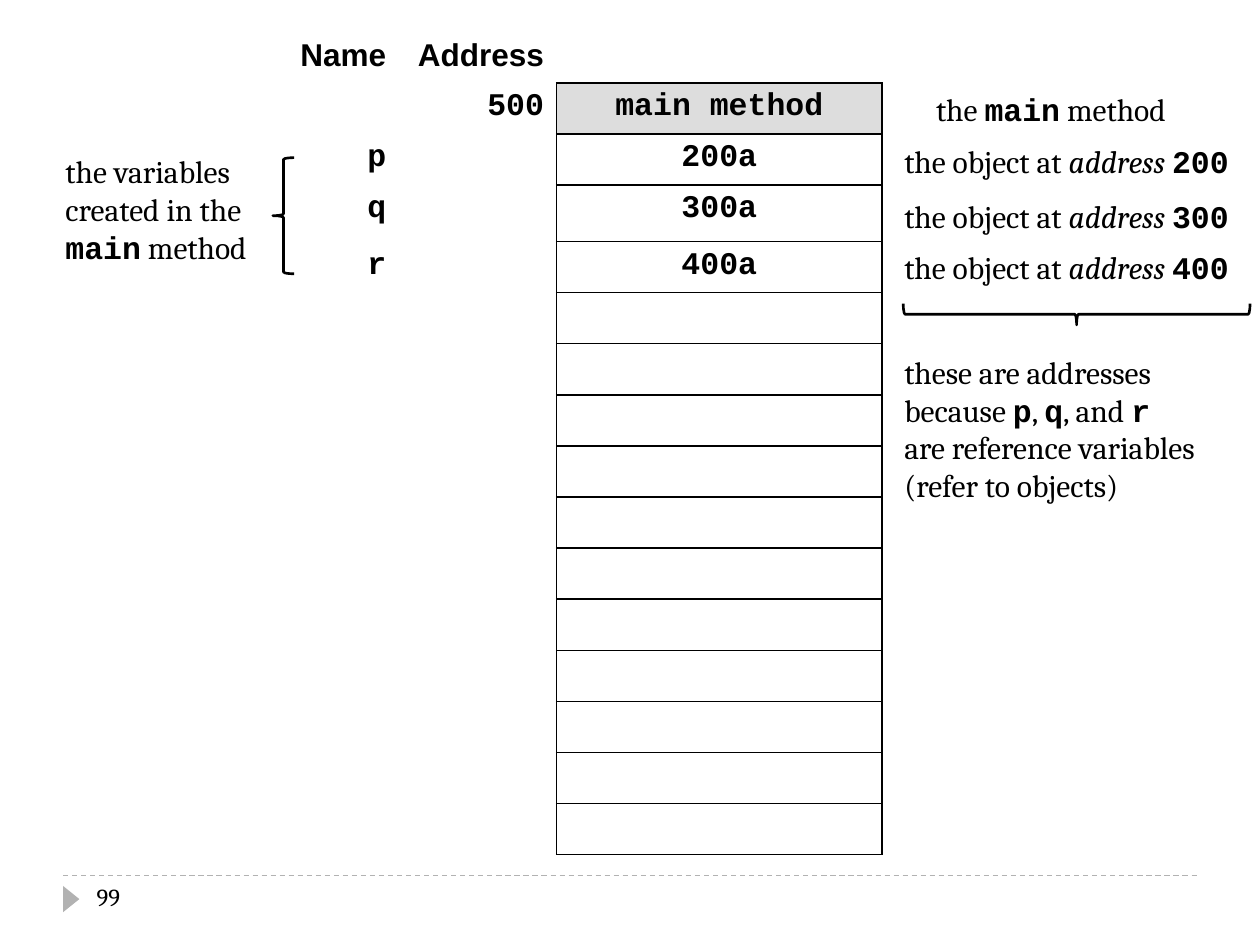
import pptx
import pptx.dml.color
import pptx.enum.dml
import pptx.enum.shapes
import pptx.enum.text
import pptx.oxml.ns
import pptx.util
from lxml import etree

Cm, Pt = pptx.util.Cm, pptx.util.Pt
SHAPES = pptx.enum.shapes.MSO_SHAPE
ALIGN = pptx.enum.text.PP_ALIGN
BLACK, WHITE, SILVER, HEADING = "000000", "FFFFFF", "B2B2B2", "DDDDDD"
SERIF, SANS, MONO = "Cambria", "Arial", "Courier New"


def colour(code):
    return pptx.dml.color.RGBColor.from_string(code)


def code(text):
    return text, MONO, True, False


def plain(text):
    return text, SERIF, False, False


def italic(text):
    return text, SERIF, False, True


def draw_border(cell, side, shade, width):
    """Add one cell edge; side is L, R, T or B, in that order."""
    tag = pptx.oxml.ns.qn
    properties = cell._tc.get_or_add_tcPr()
    edge = etree.SubElement(properties, tag("a:ln" + side), w=str(Pt(width)))
    fill = etree.SubElement(edge, tag("a:solidFill"))
    etree.SubElement(fill, tag("a:srgbClr"), val=shade)


class MemorySlide:
    def __init__(self, page, size=18):
        self.page = page
        self.size = size

    def style_font(self, font, name, bold=False, italic=False, size=None):
        font.name, font.bold, font.italic = name, bold, italic
        font.size = Pt(size or self.size)
        font.color.rgb = colour(BLACK)

    def text(self, left, top, width, height, lines, size=None):
        """Add a text box; each line is a list of (text, font, bold, italic)."""
        box = self.page.shapes.add_textbox(Cm(left), Cm(top), Cm(width), Cm(height))
        frame = box.text_frame
        frame.word_wrap = False
        frame.auto_size = pptx.enum.text.MSO_AUTO_SIZE.SHAPE_TO_FIT_TEXT
        for number, line in enumerate(lines):
            para = frame.add_paragraph() if number else frame.paragraphs[0]
            for words, *look in line:
                span = para.add_run()
                span.text = words
                self.style_font(span.font, *look, size=size)

    def shape(self, kind, left, top, width, height, rotation=0, fill=None):
        """Add a filled shape, or a black outline when there is no fill."""
        shape = self.page.shapes.add_shape(kind, Cm(left), Cm(top), Cm(width), Cm(height))
        shape.shadow.inherit = False
        shape.rotation = rotation
        if fill:
            shape.fill.solid()
            shape.fill.fore_color.rgb = colour(fill)
            shape.line.fill.background()
        else:
            shape.fill.background()
            shape.line.color.rgb = colour(BLACK)
            shape.line.width = Pt(1.5)

    def dashed_line(self, left, right, top):
        line = self.page.shapes.add_connector(
            pptx.enum.shapes.MSO_CONNECTOR.STRAIGHT, Cm(left), Cm(top), Cm(right), Cm(top))
        line.line.color.rgb = colour(SILVER)
        line.line.width = Pt(0.75)
        line.line.dash_style = pptx.enum.dml.MSO_LINE.DASH
        etree.SubElement(line._element.spPr, pptx.oxml.ns.qn("a:effectLst"))

    def memory_table(self, left, top, widths, heights, rows):
        table = self.page.shapes.add_table(
            len(heights), len(widths), Cm(left), Cm(top),
            Cm(sum(widths)), Cm(sum(heights))).table
        table.first_row = table.horz_banding = False
        for column, width in zip(table.columns, widths):
            column.width = Cm(width)
        for r, height in enumerate(heights):
            table.rows[r].height = Cm(height)
            words = rows[r] if r < len(rows) else ("", "", "")
            for c, word in enumerate(words):
                self.memory_cell(table.cell(r, c), r, c, word)

    def memory_cell(self, cell, r, c, word):
        """Frame the memory cells in black; leave the label cells open."""
        in_memory = r > 0 and c == 2
        for side in "LRTB":
            framed = (in_memory or (r > 0 and c == 1 and side == "R")
                      or (r == 0 and c == 2 and side == "B"))
            thick = r == 0 and c < 2 and side == "B"
            draw_border(cell, side, BLACK if framed else WHITE, 3 if thick else 1)
        cell.fill.solid()
        cell.fill.fore_color.rgb = colour(HEADING if in_memory and r == 1 else WHITE)
        para = cell.text_frame.paragraphs[0]
        para.text = word
        para.alignment = ALIGN.CENTER if c == 2 else ALIGN.RIGHT
        self.style_font(para.font, MONO if r else SANS, bold=True)


def main():
    deck = pptx.Presentation()
    deck.slide_width, deck.slide_height = Cm(25.4), Cm(19.05)
    slide = MemorySlide(deck.slides.add_slide(deck.slide_layouts[6]))

    slide.dashed_line(1.27, 24.13, 17.65)
    slide.shape(SHAPES.ISOSCELES_TRIANGLE, 1.17, 17.96, 0.53, 0.33, 90, SILVER)
    slide.text(1.7, 17.65, 1, 1.02, [[plain("99")]], size=14)

    heights = [1.03] * 3 + [1.14] + [1.03] * 12
    slide.memory_table(5.5, 0.64, [2.54, 3.18, 6.56], heights, [
        ("Name", "Address", ""),
        ("", "500", "main method"),
        ("p", "", "200a"),
        ("q", "", "300a"),
        ("r", "", "400a"),
    ])

    main_method = [code("main"), plain(" method")]
    slide.text(18.62, 1.7, 5.56, 1.02, [[plain("the ")] + main_method])
    slide.text(1.07, 2.95, 4.57, 2.57, [
        [plain("the variables")], [plain("created in the")], main_method])
    for address, top in (("200", 2.74), ("300", 3.84), ("400", 4.88)):
        slide.text(17.98, top, 7.45, 1.02, [
            [plain("the object at "), italic("address "), code(address)]])
    slide.shape(SHAPES.LEFT_BRACE, 5.5, 3.18, 0.43, 2.34)
    slide.shape(SHAPES.LEFT_BRACE, 21.49, 2.84, 0.43, 6.99, 270)
    slide.text(17.98, 6.99, 6.63, 3.33, [
        [plain("these are addresses")],
        [plain("because "), code("p"), plain(", "), code("q"), plain(", and "), code("r")],
        [plain("are reference variables")],
        [plain("(refer to objects)")],
    ])
    deck.save("out.pptx")


if __name__ == "__main__":
    main()
